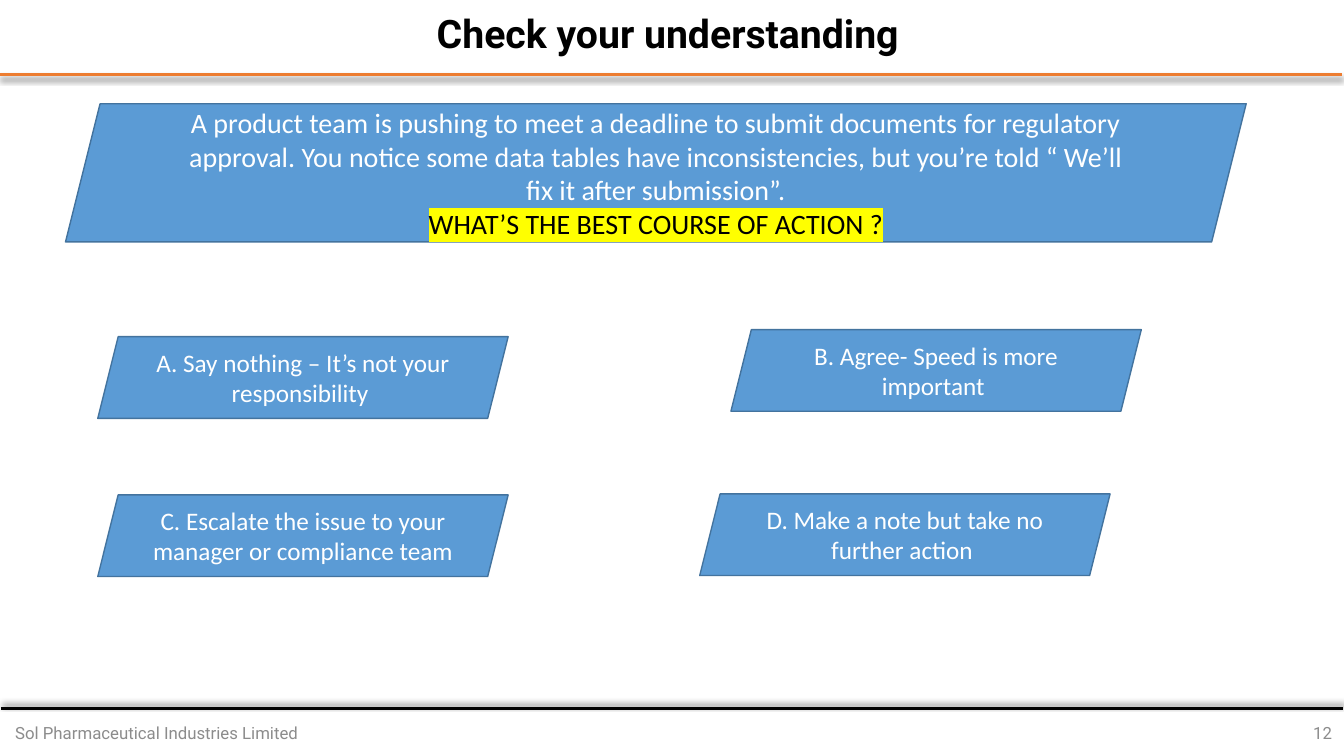
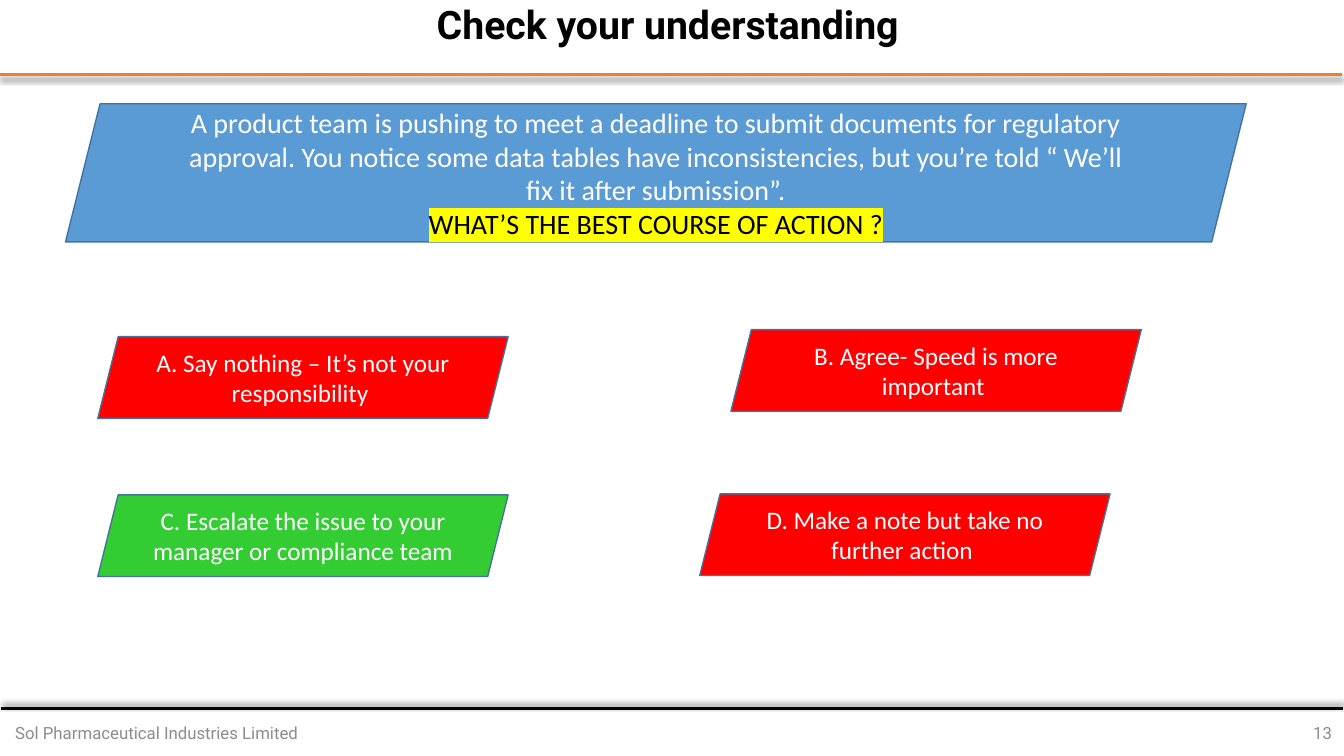
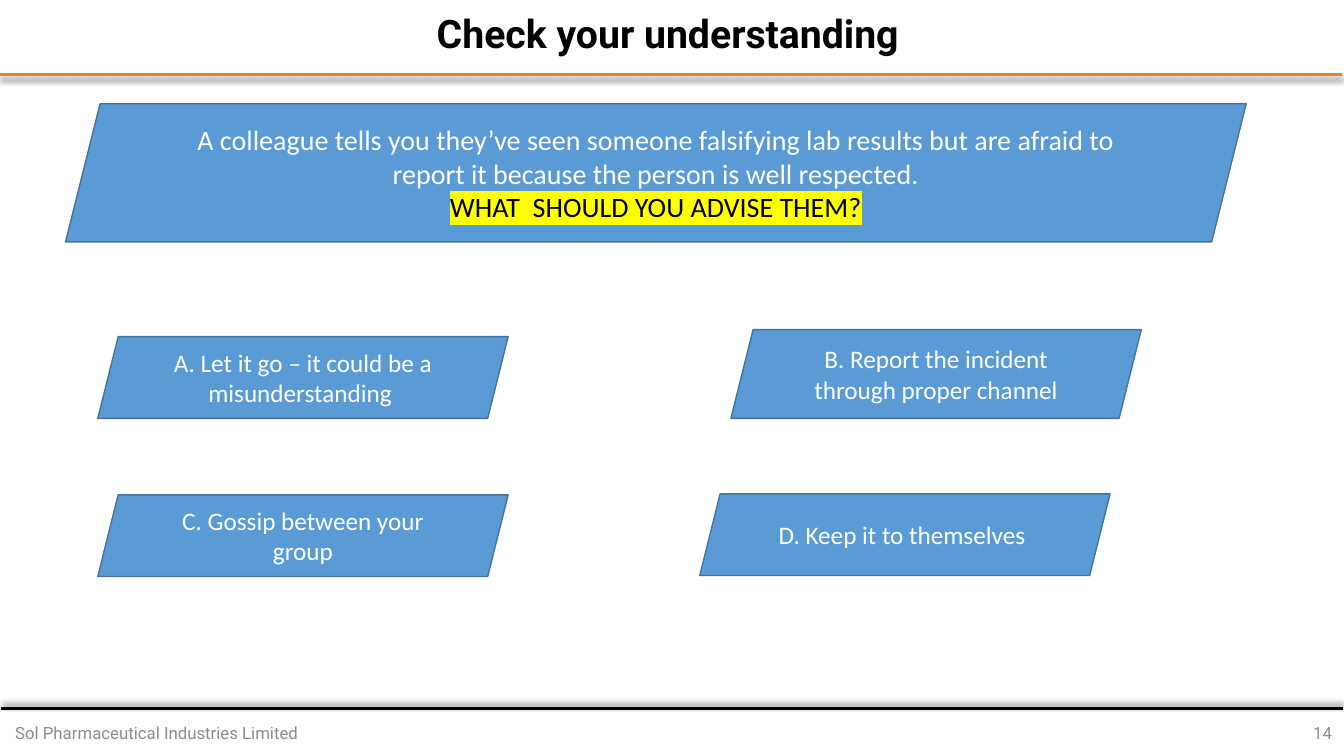
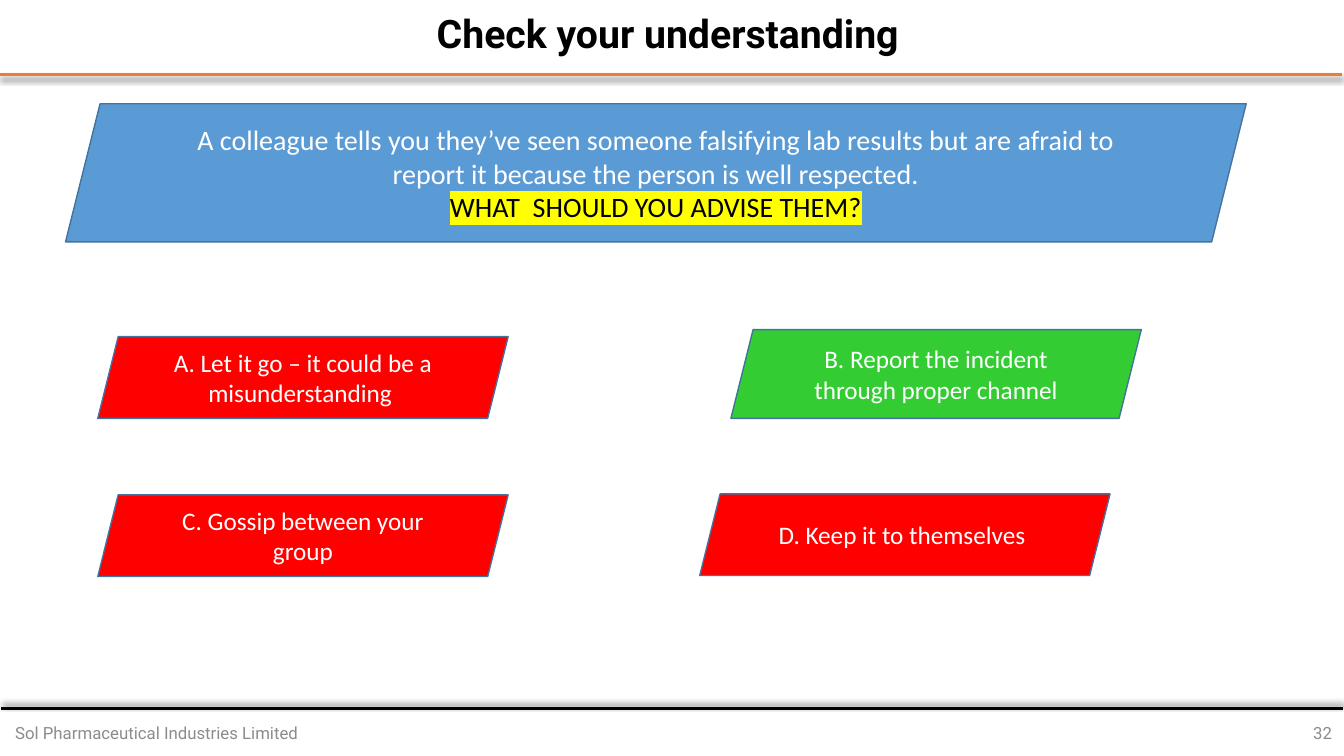
from lxml.etree import SubElement
from pptx import Presentation
from pptx.dml.color import RGBColor
from pptx.enum.shapes import MSO_CONNECTOR, MSO_SHAPE
from pptx.enum.text import MSO_ANCHOR, PP_ALIGN
from pptx.oxml.ns import qn
from pptx.util import Inches, Pt

BLACK = RGBColor(0, 0, 0)
WHITE = RGBColor(255, 255, 255)
GREY = RGBColor(0x8C, 0x8C, 0x8C)
ORANGE = RGBColor(0xED, 0x7D, 0x31)
BLUE = RGBColor(0x5B, 0x9B, 0xD5)
EDGE = RGBColor(0x43, 0x73, 0x9E)
RED = RGBColor(255, 0, 0)
GREEN = RGBColor(0x33, 0xCC, 0x33)
YELLOW = RGBColor(255, 255, 0)

HEAD, BODY = "Roboto", "Calibri"
TITLE = "Check your understanding "
FIRM = "Sol Pharmaceutical Industries Limited"
SPOTS = {"A": (0.97, 3.34), "C": (0.97, 4.91), "D": (6.94, 4.9), "B": (7.25, 3.27)}
WIDTH, HEIGHT = 4.07, 0.81

DATA = {
    "ask": "A product team is pushing to meet a deadline to submit documents for "
           "regulatory approval. You notice some data tables have inconsistencies, "
           "but you’re told “ We’ll fix it after submission”.",
    "prompt": "WHAT’S THE BEST COURSE OF ACTION ?",
    "A": "Say nothing – It’s not your responsibility ",
    "B": "Agree- Speed is more important ",
    "C": "Escalate the issue to your manager or compliance team ",
    "D": "Make a note but take no further action ",
    "right": "C",
}
LAB = {
    "ask": "A colleague tells you they’ve seen someone falsifying lab results but are "
           "afraid to report it because the person is well respected.",
    "prompt": "WHAT  SHOULD YOU ADVISE THEM?",
    "A": "Let it go – it could be a misunderstanding ",
    "B": "Report the incident through proper channel",
    "C": "Gossip between your group",
    "D": "Keep it to themselves ",
    "right": "B",
    "tall": {"B": 0.88},
}


def style(para, name, size, color, align=PP_ALIGN.CENTER, bold=False):
    para.alignment = align
    font = para.font
    font.name, font.size, font.bold = name, Pt(size), bold
    font.color.rgb = color


def mark(run, color):
    """Put a highlight behind a run, after its text fill."""
    fill = run.font._element.find(qn("a:solidFill"))
    light = fill.makeelement(qn("a:highlight"), {})
    SubElement(light, qn("a:srgbClr"), val=str(color))
    fill.addnext(light)


def rule(slide, left, top, color, angle):
    """Draw a full-width line whose shadow falls at the given angle."""
    y = Inches(top)
    line = slide.shapes.add_connector(
        MSO_CONNECTOR.STRAIGHT, Inches(left), y, Inches(left + 13.31), y)
    line.line.color.rgb = color
    line.line.width = Pt(2.25)
    effect = SubElement(line._element.spPr, qn("a:effectLst"))
    shade = SubElement(effect, qn("a:outerShdw"), blurRad=str(Pt(4)),
                       dist=str(Pt(3)), dir=str(angle * 60000), rotWithShape="0")
    tone = SubElement(shade, qn("a:srgbClr"), val=str(BLACK))
    SubElement(tone, qn("a:alpha"), val="40000")


def label(slide, box, text, size, color, align=PP_ALIGN.CENTER, bold=False, wrap=True):
    frame = slide.shapes.add_textbox(*map(Inches, box)).text_frame
    frame.word_wrap = wrap
    frame.vertical_anchor = MSO_ANCHOR.MIDDLE
    para = frame.paragraphs[0]
    para.text = text
    style(para, HEAD, size, color, align, bold)
    return para


def slant(slide, box, text, size, fill):
    shape = slide.shapes.add_shape(MSO_SHAPE.PARALLELOGRAM, *map(Inches, box))
    shape.shadow.inherit = False
    shape.fill.solid()
    shape.fill.fore_color.rgb = fill
    shape.line.color.rgb = EDGE
    shape.line.width = Pt(1)
    frame = shape.text_frame
    frame.word_wrap = True
    frame.vertical_anchor = MSO_ANCHOR.MIDDLE
    para = frame.paragraphs[0]
    para.text = text
    style(para, BODY, size, WHITE)
    return frame


def base(slide, number, top):
    """Add the title, rules and footer that every slide has."""
    rule(slide, 0, 0.74, ORANGE, 90)
    rule(slide, 0.01, 7.03, BLACK, 270)
    title = label(slide, (4.05, top, 5.24, 0.57), TITLE, 28, BLACK, bold=True)
    title.line_spacing = 0.9
    label(slide, (0.01, 7.07, 3.09, 0.4), FIRM, 12, GREY, wrap=False)
    label(slide, (10.31, 7.07, 3, 0.4), str(number), 12, GREY, PP_ALIGN.RIGHT)


def quiz(slide, case, solved):
    frame = slant(slide, (0.65, 1.03, 11.71, 1.37), case["ask"], 20, BLUE)
    para = frame.add_paragraph()
    style(para, BODY, 20, BLACK)
    run = para.add_run()
    run.text = case["prompt"]
    run.font.color.rgb = BLACK
    mark(run, YELLOW)
    for key, (left, top) in SPOTS.items():
        fill = BLUE
        if solved:
            fill = GREEN if key == case["right"] else RED
        tall = case.get("tall", {}).get(key, HEIGHT)
        slant(slide, (left, top, WIDTH, tall), f"{key}. {case[key]}", 18, fill)


def main():
    deck = Presentation()
    deck.slide_width, deck.slide_height = Inches(13.33), Inches(7.5)
    pages = ((12, 0.07, DATA, False), (13, -0.02, DATA, True),
             (14, 0.07, LAB, False), (32, 0.07, LAB, True))
    for number, top, case, solved in pages:
        slide = deck.slides.add_slide(deck.slide_layouts[6])
        base(slide, number, top)
        quiz(slide, case, solved)
    deck.save("out.pptx")


if __name__ == "__main__":
    main()
